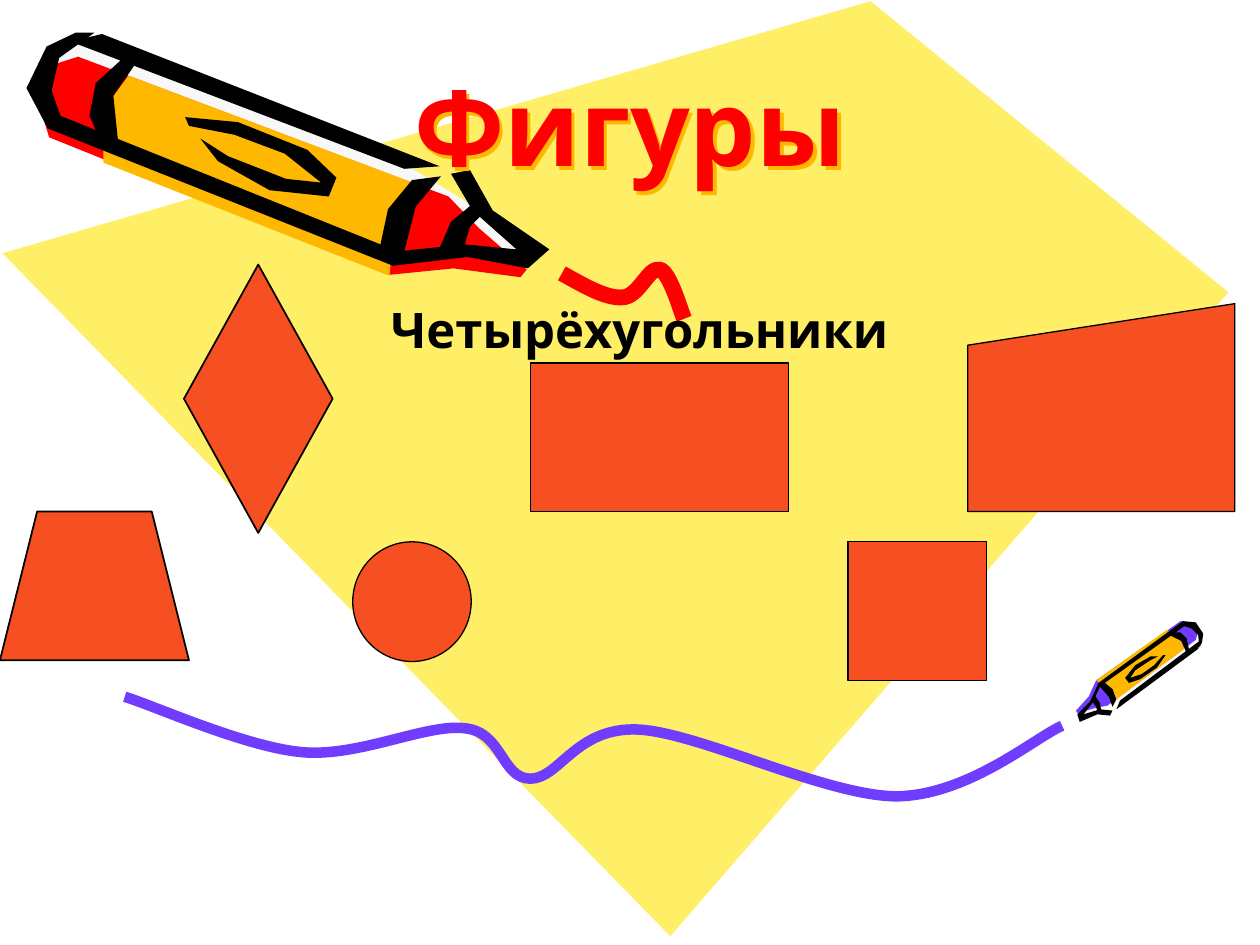
from dataclasses import dataclass

from lxml import etree
from pptx import Presentation
from pptx.dml.color import RGBColor
from pptx.enum.shapes import MSO_SHAPE
from pptx.enum.text import MSO_ANCHOR, MSO_AUTO_SIZE, PP_ALIGN
from pptx.oxml import parse_xml
from pptx.oxml.ns import nsdecls, qn
from pptx.util import Inches, Pt

CENTER = PP_ALIGN.CENTER
TOP, BOTTOM = MSO_ANCHOR.TOP, MSO_ANCHOR.BOTTOM
NO_AUTOFIT = MSO_AUTO_SIZE.NONE
ELLIPSE, RECTANGLE = MSO_SHAPE.OVAL, MSO_SHAPE.RECTANGLE
TRAPEZOID, DIAMOND = MSO_SHAPE.TRAPEZOID, MSO_SHAPE.DIAMOND
MANUAL_INPUT = MSO_SHAPE.FLOWCHART_MANUAL_INPUT


@dataclass(frozen=True)
class Theme:
    font: str = "Comic Neue"
    title_size: int = 60
    subtitle_size: int = 28
    black: str = "000000"
    white: str = "F8F8F8"
    red: str = "FF0000"
    amber: str = "FFB800"
    violet: str = "703DFF"
    yellow: str = "FFEF66"
    orange: str = "F64F22"


THEME = Theme()

BACKDROP = [(6.91, 0.01), (0.02, 2.01), (5.32, 7.43), (9.75, 2.32)]

RED_PENCIL = [
    (THEME.white, [(4.21, 1.99), (3.8, 1.66), (3.04, 1.2), (0.66, 0.31), (0.42, 0.39), (0.31, 0.66),
                   (0.45, 0.97), (3.11, 2.05), (3.7, 1.98), (4.17, 2.07)]),
    (THEME.red, [(0.62, 0.45), (3.56, 1.56), (3.8, 1.81), (4.18, 2.14), (4.13, 2.2), (3.6, 2.13),
                 (3.1, 2.18), (0.39, 1.09), (0.29, 0.77), (0.4, 0.52)]),
    (THEME.amber, [(0.82, 1.29), (3.09, 2.19), (3.14, 1.74), (3.41, 1.5), (1.02, 0.6), (0.82, 0.87)]),
    (THEME.black, [(3.75, 1.62), (3.58, 1.76), (3.48, 1.99), (3.68, 1.97), (3.73, 1.8), (3.85, 1.68)]),
    (THEME.black, [(0.6, 0.26), (0.37, 0.37), (0.21, 0.7), (0.38, 1.02), (3.12, 2.11), (3.71, 2.04),
                   (4.19, 2.13), (4.36, 1.98), (3.91, 1.67), (3.73, 1.35), (3.58, 1.38), (3.75, 1.67),
                   (4.1, 1.98), (3.69, 1.94), (3.21, 1.99), (3.3, 1.64), (3.5, 1.4), (3.27, 1.43),
                   (3.08, 1.66), (3.02, 1.94), (0.48, 0.92), (0.41, 0.72), (0.47, 0.46), (0.75, 0.26)]),
    (THEME.black, [(0.81, 0.27), (3.49, 1.32), (3.21, 1.34), (0.56, 0.33)]),
    (THEME.black, [(1, 0.44), (0.76, 0.66), (0.71, 0.92), (0.79, 1.1), (0.94, 1.15), (0.9, 0.76),
                   (1.1, 0.47)]),
    (THEME.black, [(1.5, 1), (1.86, 1.07), (2.26, 1.22), (2.55, 1.45), (2.27, 1.42), (1.81, 1.24),
                   (1.59, 1.1), (1.73, 1.28), (2.14, 1.51), (2.61, 1.56), (2.67, 1.41), (2.44, 1.19),
                   (1.89, 0.97), (1.47, 0.93)]),
]

VIOLET_PENCIL = [
    (THEME.white, [(8.58, 5.69), (8.72, 5.64), (8.95, 5.54), (9.52, 5.11), (9.54, 5.04), (9.49, 4.97),
                   (9.39, 4.96), (8.73, 5.42), (8.66, 5.57), (8.57, 5.67)]),
    (THEME.violet, [(9.49, 5.08), (8.79, 5.6), (8.69, 5.62), (8.55, 5.66), (8.54, 5.64), (8.64, 5.53),
                    (8.7, 5.4), (9.37, 4.93), (9.46, 4.95), (9.51, 5.01)]),
    (THEME.amber, [(9.26, 5), (8.7, 5.4), (8.81, 5.48), (8.82, 5.58), (9.4, 5.15), (9.36, 5.06)]),
    (THEME.black, [(8.74, 5.64), (8.73, 5.58), (8.69, 5.52), (8.67, 5.57), (8.7, 5.61), (8.71, 5.65)]),
    (THEME.black, [(9.54, 5.1), (9.55, 5.03), (9.49, 4.94), (9.39, 4.93), (8.72, 5.42), (8.65, 5.57),
                   (8.55, 5.67), (8.57, 5.73), (8.71, 5.67), (8.81, 5.68), (8.83, 5.64), (8.73, 5.63),
                   (8.6, 5.67), (8.67, 5.58), (8.73, 5.45), (8.8, 5.53), (8.83, 5.61), (8.86, 5.55),
                   (8.83, 5.47), (8.77, 5.42), (9.4, 4.97), (9.46, 4.99), (9.51, 5.04), (9.52, 5.14)]),
    (THEME.black, [(9.51, 5.15), (8.86, 5.63), (8.89, 5.56), (9.53, 5.08)]),
    (THEME.black, [(9.44, 5.17), (9.42, 5.07), (9.37, 5.02), (9.31, 5.02), (9.28, 5.04), (9.38, 5.09),
                   (9.42, 5.19)]),
    (THEME.black, [(9.23, 5.2), (9.16, 5.28), (9.06, 5.35), (8.97, 5.38), (9.01, 5.32), (9.13, 5.24),
                   (9.19, 5.21), (9.13, 5.21), (9.01, 5.28), (8.93, 5.38), (8.96, 5.42), (9.05, 5.39),
                   (9.18, 5.3), (9.25, 5.2)]),
]

VIOLET_STROKE = [(0.99, 5.53), (1.22, 5.6), (1.95, 5.93), (2.4, 5.97), (2.85, 6.01), (3.39, 5.74),
                 (3.69, 5.78), (3.99, 5.81), (3.98, 6.18), (4.21, 6.18), (4.44, 6.18), (4.57, 5.77),
                 (5.06, 5.79), (5.54, 5.81), (6.56, 6.32), (7.12, 6.32), (7.69, 6.31), (8.22, 5.85),
                 (8.43, 5.76)]
RED_STROKE = [(4.46, 2.17), (4.64, 2.27), (4.81, 2.37), (4.94, 2.36), (5.07, 2.36), (5.15, 2.11),
              (5.24, 2.14), (5.32, 2.17), (5.4, 2.46), (5.43, 2.53)]

FIGURES = [
    (ELLIPSE, (2.8, 4.3, 0.94, 0.95), 0.75),
    (RECTANGLE, (6.73, 4.3, 1.1, 1.1), 0.75),
    (RECTANGLE, (4.21, 2.88, 2.05, 1.18), 0.75),
    (TRAPEZOID, (0, 4.06, 1.5, 1.18), 1),
    (DIAMOND, (1.46, 2.1, 1.18, 2.13), 1),
    (MANUAL_INPUT, (7.68, 2.41, 2.12, 1.65), 0.75),
]


class SlidePainter:
    """Draws styled elements on the current slide."""

    def __init__(self, slide, theme):
        self.slide = slide
        self.theme = theme

    def outline(self, points, closed):
        start, *rest = [(Inches(x), Inches(y)) for x, y in points]
        builder = self.slide.shapes.build_freeform(*start)
        builder.add_line_segments(rest, close=closed)
        shape = builder.convert_to_shape()
        shape.shadow.inherit = False
        return shape

    def polygon(self, points, color):
        shape = self.outline(points, closed=True)
        self.fill(shape, color)
        shape.line.fill.background()

    def pencil(self, parts):
        for color, points in parts:
            self.polygon(points, color)

    def curve(self, points, color, width):
        shape = self.outline(points, closed=False)
        shape.fill.background()
        self.line(shape, color, width)
        segments = list(shape.element.iter(qn("a:lnTo")))
        for first in range(0, len(segments), 3):
            group = segments[first:first + 3]
            bezier = etree.Element(qn("a:cubicBezTo"))
            group[0].addprevious(bezier)
            for segment in group:
                bezier.append(segment[0])
                segment.getparent().remove(segment)

    def figure(self, kind, place, width):
        shape = self.slide.shapes.add_shape(kind, *map(Inches, place))
        shape.shadow.inherit = False
        self.fill(shape, self.theme.orange)
        self.line(shape, self.theme.black, width)

    def placeholder(self, box, place, text, size, color, anchor):
        box.left, box.top, box.width, box.height = map(Inches, place)
        box.element.getparent().append(box.element)
        frame = box.text_frame
        frame.text = text
        frame.auto_size = NO_AUTOFIT
        frame.vertical_anchor = anchor
        para = frame.paragraphs[0]
        para.alignment = CENTER
        para.font.name = self.theme.font
        para.font.size = Pt(size)
        para.font.bold = True
        para.font.color.rgb = RGBColor.from_string(color)

    def text_shadow(self, box, color):
        box.element.spPr.append(parse_xml(
            f'<a:effectLst {nsdecls("a")}><a:outerShdw dist="{Inches(0.04)}" dir="2700000" '
            f'algn="ctr" rotWithShape="0"><a:srgbClr val="{color}"/></a:outerShdw></a:effectLst>'))

    def fill(self, shape, color):
        shape.fill.solid()
        shape.fill.fore_color.rgb = RGBColor.from_string(color)

    def line(self, shape, color, width):
        shape.line.color.rgb = RGBColor.from_string(color)
        shape.line.width = Pt(width)


def main():
    deck = Presentation()
    deck.slide_width, deck.slide_height = Inches(10), Inches(7.5)
    slide = deck.slides.add_slide(deck.slide_layouts[0])
    painter = SlidePainter(slide, THEME)

    painter.polygon(BACKDROP, THEME.yellow)
    painter.pencil(RED_PENCIL)
    painter.pencil(VIOLET_PENCIL)
    painter.curve(VIOLET_STROKE, THEME.violet, 6)
    painter.curve(RED_STROKE, THEME.red, 9)

    title, subtitle = slide.shapes.title, slide.placeholders[1]
    painter.placeholder(title, (0.75, 0.28, 8.5, 1.26), "Фигуры",
                        THEME.title_size, THEME.red, BOTTOM)
    painter.text_shadow(title, THEME.amber)
    painter.placeholder(subtitle, (0.9, 2.33, 8.35, 3.83), "Четырёхугольники",
                        THEME.subtitle_size, THEME.black, TOP)

    for kind, place, width in FIGURES:
        painter.figure(kind, place, width)
    deck.save("out.pptx")


if __name__ == "__main__":
    main()
